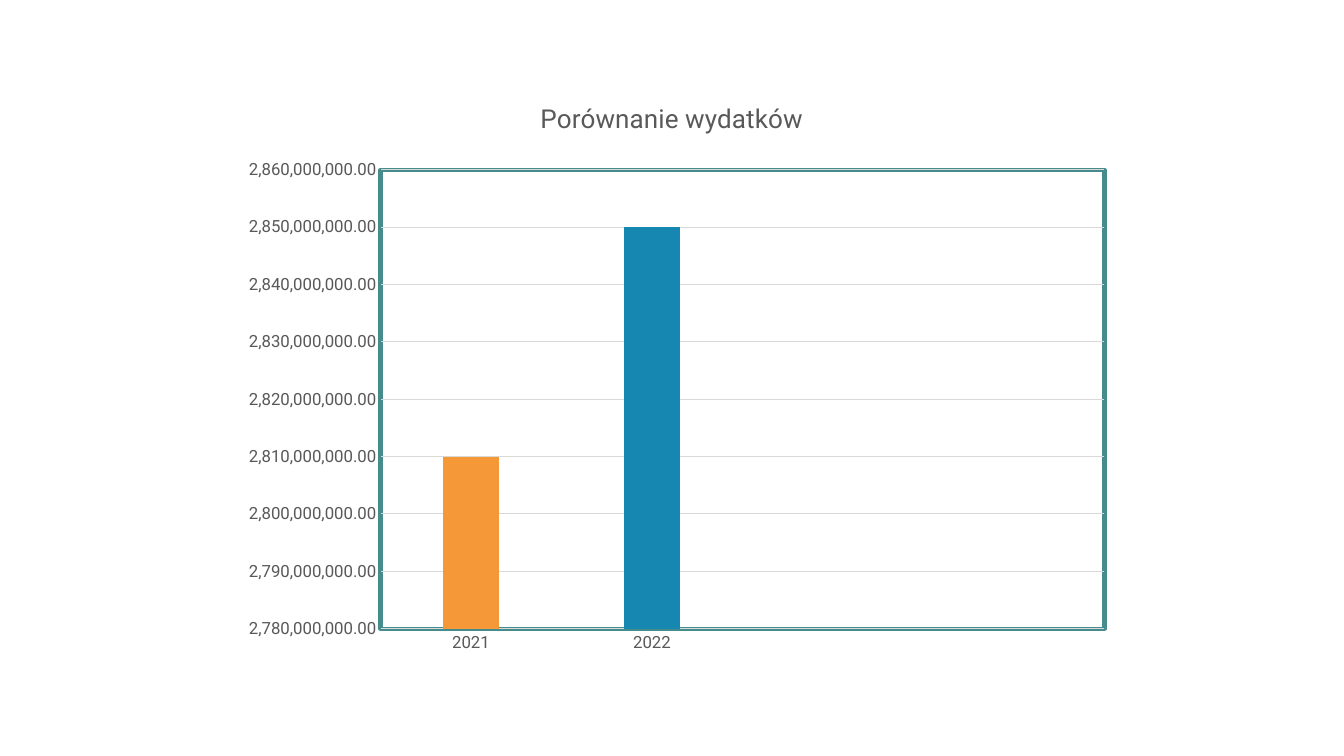
import pptx
import pptx.chart.data
import pptx.dml.color
import pptx.enum.chart
import pptx.oxml
import pptx.oxml.ns
import pptx.util
from pptx.util import Cm

GREY = pptx.dml.color.RGBColor(0x59, 0x59, 0x59)
GRID = pptx.dml.color.RGBColor(0xD9, 0xD9, 0xD9)
ORANGE = pptx.dml.color.RGBColor(0xF4, 0x98, 0x38)
BLUE = pptx.dml.color.RGBColor(0x15, 0x87, 0xB1)
TAN = pptx.dml.color.RGBColor(0xCE, 0xA7, 0x7C)
PEACH = pptx.dml.color.RGBColor(0xF9, 0xC9, 0x96)
CREAM = pptx.dml.color.RGBColor(0xFB, 0xDE, 0xC3)
TEAL = pptx.dml.color.RGBColor(0x46, 0x8C, 0x8C)


def style_font(font, size, color=GREY):
    font.name = "Roboto"
    font.size = pptx.util.Pt(size)
    font.bold = False
    font.color.rgb = color


def write(frame, text, **style):
    frame.text = text
    style_font(frame.paragraphs[0].runs[0].font, **style)


deck = pptx.Presentation()
deck.slide_width = Cm(33.87)
deck.slide_height = Cm(19.05)
slide = deck.slides.add_slide(deck.slide_layouts[6])

spending = pptx.chart.data.CategoryChartData(number_format="#,##0.00")
spending.categories = ["2021", "2022", "", ""]
spending.add_series("Series 1", [2810000000, 2850000000, None, None])
spending.add_series("Series 2", [])
spending.add_series("Series 3", [])
chart = slide.shapes.add_chart(
    pptx.enum.chart.XL_CHART_TYPE.COLUMN_CLUSTERED,
    Cm(5.64), Cm(1.99), Cm(22.58), Cm(15.06), spending).chart

chart.has_legend = False
chart.has_title = True
write(chart.chart_title.text_frame, "Porównanie wydatków", size=18.6)

years, amounts = chart.category_axis, chart.value_axis
for axis in (years, amounts):
    style_font(axis.tick_labels.font, 12)
    axis.major_tick_mark = pptx.enum.chart.XL_TICK_MARK.NONE
    axis.minor_tick_mark = pptx.enum.chart.XL_TICK_MARK.NONE
amounts.minimum_scale = 2780000000
amounts.maximum_scale = 2860000000
amounts.major_unit = 10000000
amounts.tick_labels.number_format = "#,##0.00"
amounts.tick_labels.number_format_is_linked = False
amounts.format.line.fill.background()
amounts.has_major_gridlines = True
for rule in (years.format.line, amounts.major_gridlines.format.line):
    rule.color.rgb = GRID
    rule.width = pptx.util.Pt(0.75)

columns = chart.plots[0]
columns.gap_width = 219
columns.overlap = -27
columns.vary_by_categories = False
expenses, *unused = columns.series
painted = [*zip(columns.series, (TAN, PEACH, CREAM)),
           (expenses.points[0], ORANGE), (expenses.points[1], BLUE)]
for part, color in painted:
    part.format.fill.solid()
    part.format.fill.fore_color.rgb = color
for series in unused:
    series._element.remove(series._element.find(pptx.oxml.ns.qn("c:val")))

plot_area = chart._chartSpace.chart.plotArea
for old_layout in plot_area.findall(pptx.oxml.ns.qn("c:layout")):
    plot_area.remove(old_layout)
plot_area.insert(0, pptx.oxml.parse_xml(
    f'<c:layout {pptx.oxml.ns.nsdecls("c")}><c:manualLayout>'
    '<c:layoutTarget val="inner"/><c:xMode val="edge"/><c:yMode val="edge"/>'
    '<c:x val="0.175"/><c:y val="0.152"/><c:w val="0.808"/><c:h val="0.768"/>'
    '</c:manualLayout></c:layout>'))
plot_area.append(pptx.oxml.parse_xml(
    f'<c:spPr {pptx.oxml.ns.nsdecls("c", "a")}><a:noFill/>'
    f'<a:ln w="{pptx.util.Pt(3)}"><a:solidFill><a:srgbClr val="{TEAL}"/></a:solidFill>'
    '<a:round/></a:ln></c:spPr>'))

deck.save("out.pptx")
